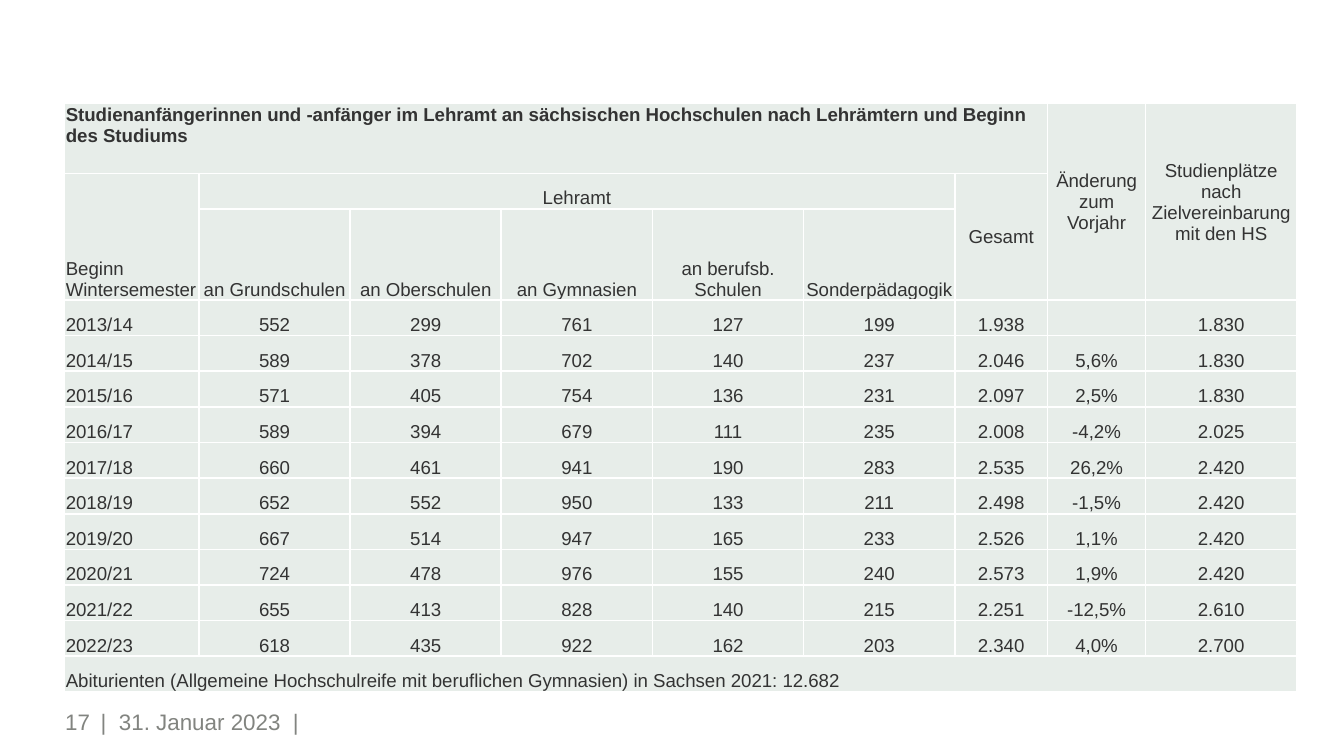
"""Build a slide with a table of first-year teacher-training students in Saxony."""
from dataclasses import dataclass
from typing import NamedTuple

from lxml import etree
from pptx import Presentation
from pptx.dml.color import RGBColor
from pptx.enum.text import MSO_ANCHOR, PP_ALIGN
from pptx.oxml.ns import qn
from pptx.util import Inches, Pt

TOP, MIDDLE, BOTTOM = MSO_ANCHOR.TOP, MSO_ANCHOR.MIDDLE, MSO_ANCHOR.BOTTOM
LEFT, CENTER, RIGHT = PP_ALIGN.LEFT, PP_ALIGN.CENTER, PP_ALIGN.RIGHT


@dataclass(frozen=True)
class Theme:
    font: str = "Arial"
    text: str = "333333"
    muted: str = "828480"
    fill: str = "E7EDE9"
    border: str = "FFFFFF"
    table_size: int = 10
    footer_size: int = 12
    border_width: int = 1


class Box(NamedTuple):
    left: float
    top: float
    width: float
    height: float


class Entry(NamedTuple):
    row: int
    col: int
    text: str
    align: PP_ALIGN = CENTER
    anchor: MSO_ANCHOR = BOTTOM
    rows: int = 1
    cols: int = 1
    bold: bool = False


class Footer(NamedTuple):
    text: str
    box: Box
    align: PP_ALIGN


THEME = Theme()
SLIDE_W = 10
SLIDE_H = SLIDE_W * 9 / 16
TABLE = Box(0.48, 0.77, 9.17, 4.2)
YEAR_W, TOTAL_W, CHANGE_W = 1, 0.69, 0.73
WIDE = (TABLE.width - YEAR_W - TOTAL_W - CHANGE_W) / 6
COLUMNS = [YEAR_W] + [WIDE] * 5 + [TOTAL_W, CHANGE_W, WIDE]
TITLE_H, LABEL_H = 0.52, 0.5
LINE_H = (TABLE.height - TITLE_H - LABEL_H) / 12
ROWS = [TITLE_H, LINE_H, LABEL_H] + [LINE_H] * 11

HEADINGS = [
    Entry(0, 0, "Studienanfängerinnen und -anfänger im Lehramt an sächsischen Hochschulen "
          "nach Lehrämtern und Beginn des Studiums", LEFT, TOP, cols=7, bold=True),
    Entry(0, 7, "Änderung zum Vorjahr", anchor=MIDDLE, rows=3),
    Entry(0, 8, "Studienplätze nach Zielvereinbarung mit den HS", anchor=MIDDLE, rows=3),
    Entry(1, 0, "Beginn Wintersemester", LEFT, rows=2),
    Entry(1, 1, "Lehramt", cols=5),
    Entry(1, 6, "Gesamt", anchor=MIDDLE, rows=2),
    Entry(13, 0, "Abiturienten (Allgemeine Hochschulreife mit beruflichen Gymnasien) "
          "in Sachsen 2021: 12.682", LEFT, cols=9),
]
LEHRAEMTER = ["an Grundschulen", "an Oberschulen", "an Gymnasien",
              "an berufsb. Schulen", "Sonderpädagogik"]
YEARS = [
    ("2013/14", "552", "299", "761", "127", "199", "1.938", "", "1.830"),
    ("2014/15", "589", "378", "702", "140", "237", "2.046", "5,6%", "1.830"),
    ("2015/16", "571", "405", "754", "136", "231", "2.097", "2,5%", "1.830"),
    ("2016/17", "589", "394", "679", "111", "235", "2.008", "-4,2%", "2.025"),
    ("2017/18", "660", "461", "941", "190", "283", "2.535", "26,2%", "2.420"),
    ("2018/19", "652", "552", "950", "133", "211", "2.498", "-1,5%", "2.420"),
    ("2019/20", "667", "514", "947", "165", "233", "2.526", "1,1%", "2.420"),
    ("2020/21", "724", "478", "976", "155", "240", "2.573", "1,9%", "2.420"),
    ("2021/22", "655", "413", "828", "140", "215", "2.251", "-12,5%", "2.610"),
    ("2022/23", "618", "435", "922", "162", "203", "2.340", "4,0%", "2.700"),
]
FOOTERS = [
    Footer("|  31. Januar 2023  |", Box(0.75, 5.11, 4.96, 0.52), LEFT),
    Footer("17", Box(0, 5.11, 0.67, 0.52), RIGHT),
]


def set_attrs(obj: object, values: dict) -> None:
    """Set each named attribute on an object."""
    for name, value in values.items():
        setattr(obj, name, value)


def write(p, text: str, align: PP_ALIGN, size: int, color: str, bold: bool = False) -> None:
    """Write one formatted run, or only the type size where there is no text."""
    p.alignment = align
    if not text:
        etree.SubElement(p._p, qn("a:endParaRPr"), sz=str(size * 100))
        return
    r = p.add_run()
    r.text = text
    set_attrs(r.font, {"name": THEME.font, "size": Pt(size), "bold": bold})
    r.font.color.rgb = RGBColor.from_string(color)


def add_borders(cell) -> None:
    """Draw a solid line on all four sides of a cell."""
    tc_pr = cell._tc.get_or_add_tcPr()
    for i, side in enumerate(("a:lnL", "a:lnR", "a:lnT", "a:lnB")):
        ln = etree.Element(qn(side), w=str(Pt(THEME.border_width)))
        fill = etree.SubElement(ln, qn("a:solidFill"))
        etree.SubElement(fill, qn("a:srgbClr"), val=THEME.border)
        tc_pr.insert(i, ln)


def fill_cell(cell, entry: Entry) -> None:
    """Format a cell and write its entry."""
    inset = Inches(0.01)
    set_attrs(cell, {"margin_left": inset, "margin_right": inset, "margin_top": inset,
                     "margin_bottom": 0, "vertical_anchor": entry.anchor})
    cell.fill.solid()
    cell.fill.fore_color.rgb = RGBColor.from_string(THEME.fill)
    add_borders(cell)
    write(cell.text_frame.paragraphs[0], entry.text, entry.align,
          THEME.table_size, THEME.text, entry.bold)


def table_entries() -> dict[tuple[int, int], Entry]:
    """Collect all entries by row and column."""
    entries = HEADINGS + [Entry(2, c, text) for c, text in enumerate(LEHRAEMTER, 1)]
    entries += [Entry(r, c, text, CENTER if c else LEFT)
                for r, year in enumerate(YEARS, 3) for c, text in enumerate(year)]
    return {(e.row, e.col): e for e in entries}


def add_student_table(s) -> None:
    """Add the table of students by year."""
    frame = s.shapes.add_table(len(ROWS), len(COLUMNS), *map(Inches, TABLE))
    table = frame.table
    set_attrs(table, {"first_row": False, "horz_banding": False})
    for column, width in zip(table.columns, COLUMNS):
        column.width = Inches(width)
    for row, height in zip(table.rows, ROWS):
        row.height = Inches(height)
    entries = table_entries()
    for r in range(len(ROWS)):
        for c in range(len(COLUMNS)):
            fill_cell(table.cell(r, c), entries.get((r, c), Entry(r, c, "")))
    for e in HEADINGS:
        table.cell(e.row, e.col).merge(table.cell(e.row + e.rows - 1, e.col + e.cols - 1))


def add_footer(s, footer: Footer) -> None:
    """Add one footer text box."""
    tf = s.shapes.add_textbox(*map(Inches, footer.box)).text_frame
    set_attrs(tf, {"word_wrap": True, "vertical_anchor": MIDDLE, "margin_left": 0,
                   "margin_right": 0, "margin_top": 0, "margin_bottom": 0})
    write(tf.paragraphs[0], footer.text, footer.align, THEME.footer_size, THEME.muted)


def main() -> None:
    """Build and save the slide."""
    prs = Presentation()
    set_attrs(prs, {"slide_width": Inches(SLIDE_W), "slide_height": Inches(SLIDE_H)})
    s = prs.slides.add_slide(prs.slide_layouts[6])
    for footer in FOOTERS:
        add_footer(s, footer)
    add_student_table(s)
    prs.save("out.pptx")


if __name__ == "__main__":
    main()
